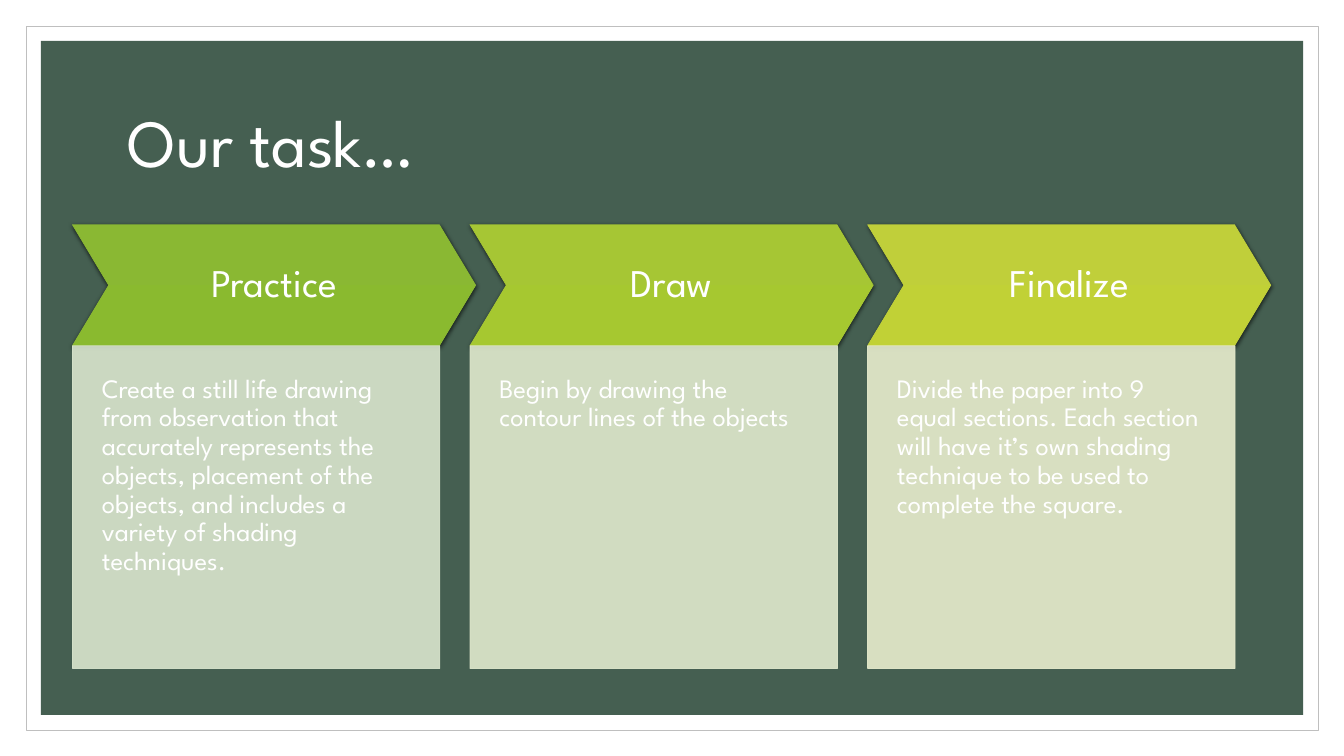
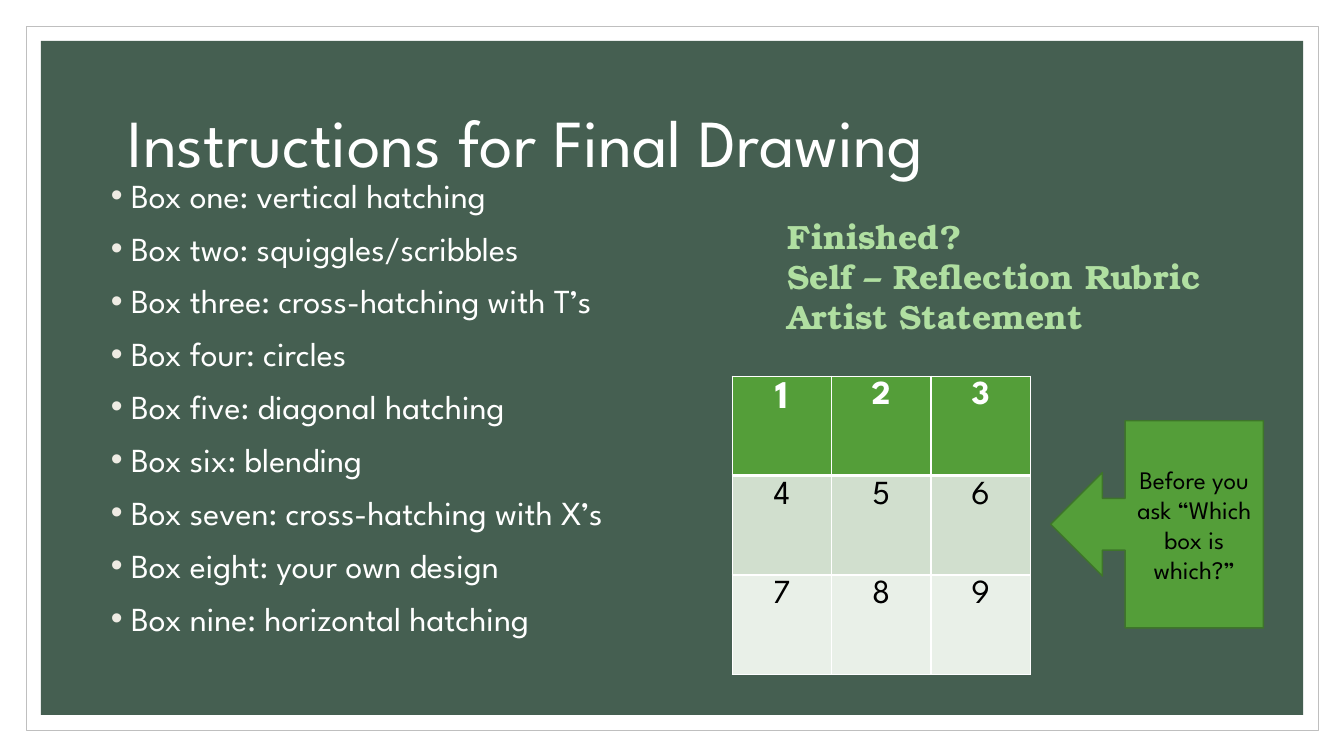
from dataclasses import dataclass

from lxml.etree import SubElement
from pptx import Presentation
from pptx.dml.color import RGBColor
from pptx.enum.shapes import MSO_SHAPE
from pptx.enum.text import MSO_ANCHOR, MSO_AUTO_SIZE, PP_ALIGN
from pptx.oxml.ns import qn
from pptx.util import Pt

RECT = MSO_SHAPE.RECTANGLE
CHEVRON = MSO_SHAPE.CHEVRON
CALLOUT = MSO_SHAPE.LEFT_ARROW_CALLOUT
TOP, MIDDLE = MSO_ANCHOR.TOP, MSO_ANCHOR.MIDDLE
LEFT, CENTER = PP_ALIGN.LEFT, PP_ALIGN.CENTER
NO_FIT = MSO_AUTO_SIZE.NONE
TITLE_ONLY, TITLE_BODY = 5, 1


@dataclass(frozen=True)
class Theme:
    """Colours, fonts and type sizes of the deck."""
    font: str = "League Spartan"
    serif: str = "TeX Gyre Bonum"
    white: str = "FFFFFF"
    black: str = "000000"
    edge: str = "BFBFBF"
    board: str = "455F51"
    bullet: str = "EEEBE3"
    mint: str = "B0DFA1"
    green: str = "549E39"
    moss: str = "3E752A"
    rows: tuple = ("549E39", "D1DFCE", "E9F0E8")
    steps: tuple = (("8AB833", "8ABA2F", "DAE6CE"),
                    ("A6C634", "A6C830", "E1EACE"),
                    ("C0CF3A", "C1D136", "E8EDCE"))
    title: int = 48
    head: int = 28
    body: int = 24
    label: int = 18
    small: int = 19


THEME = Theme()


def rgb(code):
    """Turn a hex code into a colour."""
    return RGBColor.from_string(code)


def put(frame, text, size=THEME.body, color=THEME.white, font=THEME.font,
        bold=False, align=LEFT, anchor=TOP, lead=1.0, before=0, inset=None):
    """Fill a text frame, one paragraph for each line of text."""
    frame.word_wrap = True
    frame.auto_size = NO_FIT
    frame.vertical_anchor = anchor
    if inset:
        (frame.margin_left, frame.margin_top,
         frame.margin_right, frame.margin_bottom) = map(Pt, inset)
    for i, line in enumerate(text.split("\n")):
        para = frame.add_paragraph() if i else frame.paragraphs[0]
        para.alignment = align
        para.line_spacing = lead
        para.space_before = Pt(before)
        run = para.add_run()
        run.text = line
        run.font.name, run.font.size, run.font.bold = font, Pt(size), bold
        run.font.color.rgb = rgb(color)


class Deck:
    """The deck's style and its current slide."""

    def __init__(self, theme):
        """Start an empty wide deck."""
        self.theme = theme
        self.show = Presentation()
        self.show.slide_width, self.show.slide_height = Pt(960), Pt(540)
        self.slide = None

    def start(self, layout, title):
        """Add a slide with its title."""
        first = self.slide is None
        self.slide = self.show.slides.add_slide(self.show.slide_layouts[layout])
        if first:
            self.frame()
        box = self.slide.shapes.title
        self.place(box, 84, 50.4, 792, 108)
        put(box.text_frame, title, size=self.theme.title, anchor=MIDDLE, lead=0.9)

    def place(self, shape, x, y, w, h):
        """Move and size a shape."""
        shape.left, shape.top, shape.width, shape.height = map(Pt, (x, y, w, h))

    def frame(self):
        """Put the white border and the board on the master."""
        look = self.theme
        tree = self.show.slide_master.shapes.element
        border = self.shape(RECT, 19, 19, 922.5, 502.5, look.white, look.edge)
        board = self.shape(RECT, 29.25, 29.25, 901.5, 481.5, look.board)
        for i, part in enumerate((border, board)):
            part.element.nvSpPr.cNvPr.set("id", str(20 + i))
            tree.insert(2 + i, part.element)

    def shape(self, kind, x, y, w, h, fill, line=None, width=0.5):
        """Draw a flat preset shape."""
        item = self.slide.shapes.add_shape(kind, Pt(x), Pt(y), Pt(w), Pt(h))
        item.shadow.inherit = False
        item.fill.solid()
        item.fill.fore_color.rgb = rgb(fill)
        if line:
            item.line.color.rgb = rgb(line)
            item.line.width = Pt(width)
        else:
            item.line.fill.background()
        return item

    def shade(self, item):
        """Give a shape a soft shadow below it."""
        glow = item.element.spPr.find(qn("a:effectLst"))
        outer = SubElement(glow, qn("a:outerShdw"), blurRad=str(Pt(3)),
                           dist=str(Pt(1)), dir="5400000", rotWithShape="0")
        tint = SubElement(outer, qn("a:srgbClr"), val=self.theme.black)
        SubElement(tint, qn("a:alpha"), val="63000")

    def step(self, x, name, text, tones):
        """Draw a chevron heading with its text panel."""
        look = self.theme
        start, end, pale = tones
        head = self.shape(CHEVRON, x, 160.5, 288, 86.5, start, start)
        head.adjustments[0] = 0.3
        head.fill.gradient()
        head.fill.gradient_angle = 270
        for stop, tone in zip(head.fill.gradient_stops, (start, end)):
            stop.color.rgb = rgb(tone)
        self.shade(head)
        put(head.text_frame, name, size=look.head, align=CENTER, anchor=MIDDLE,
            lead=0.9, inset=(10.8,) * 4)
        panel = self.shape(RECT, x, 247, 262.5, 230.5, pale, pale)
        for tint in panel.element.spPr.iter(qn("a:srgbClr")):
            SubElement(tint, qn("a:alpha"), val="90000")
        put(panel.text_frame, text, size=look.small, lead=0.9,
            inset=(21, 21, 21, 42))

    def list(self, text, *spot):
        """Fill the body with a bullet list."""
        body = self.slide.placeholders[1]
        self.place(body, *spot)
        put(body.text_frame, text, before=9)
        for para in body.text_frame.paragraphs:
            props = para._p.get_or_add_pPr()
            props.set("marL", str(Pt(14.4)))
            props.set("indent", str(-Pt(14.4)))
            tint = SubElement(props, qn("a:buClr"))
            SubElement(tint, qn("a:srgbClr"), val=self.theme.bullet)
            SubElement(props, qn("a:buFont"), typeface="Arial")
            SubElement(props, qn("a:buChar"), char="•")

    def note(self, text, *spot):
        """Add a bold serif text box."""
        box = self.slide.shapes.add_textbox(*map(Pt, spot))
        put(box.text_frame, text, color=self.theme.mint,
            font=self.theme.serif, bold=True)

    def edge(self, cell, side, width):
        """Draw one white border of a cell."""
        props = cell._tc.get_or_add_tcPr()
        line = SubElement(props, qn("a:ln" + side), w=str(Pt(width)))
        fill = SubElement(line, qn("a:solidFill"))
        SubElement(fill, qn("a:srgbClr"), val=self.theme.white)

    def grid(self, x, y, side):
        """Add a square table of numbered boxes."""
        look = self.theme
        count = len(look.rows)
        size = Pt(side * count)
        table = self.slide.shapes.add_table(
            count, count, Pt(x), Pt(y), size, size).table
        table.first_row = table.horz_banding = False
        for i in range(count):
            table.columns[i].width = table.rows[i].height = Pt(side)
        for i, cell in enumerate(table.iter_cells()):
            row = i // count
            top = row == 0
            for mark in "LRTB":
                thick = (row, mark) in ((0, "B"), (1, "T"))
                self.edge(cell, mark, 3 if thick else 1)
            cell.fill.solid()
            cell.fill.fore_color.rgb = rgb(look.rows[row])
            put_cell = {"color": look.white if top else look.black, "bold": top}
            put(cell.text_frame, str(i + 1), align=CENTER,
                size=look.body if i else look.head, **put_cell)

    def call(self, text, *spot):
        """Add a callout that points left."""
        look = self.theme
        item = self.shape(CALLOUT, *spot, look.green, look.moss, 1)
        put(item.text_frame, text, size=look.label, color=look.black,
            align=CENTER, anchor=MIDDLE)


STEPS = (
    ("Practice", "Create a still life drawing from observation that accurately "
     "represents the objects, placement of the objects, and includes a variety "
     "of shading techniques."),
    ("Draw", "Begin by drawing the contour lines of the objects"),
    ("Finalize", "Divide the paper into 9 equal sections. Each section will have "
     "it’s own shading technique to be used to complete the square."),
)
BOXES = """Box one: vertical hatching
Box two: squiggles/scribbles
Box three: cross-hatching with T’s
Box four: circles
Box five: diagonal hatching
Box six: blending
Box seven: cross-hatching with X’s
Box eight: your own design
Box nine: horizontal hatching"""


def main():
    """Build both slides and save the deck."""
    deck = Deck(THEME)
    deck.start(TITLE_ONLY, "Our task…")
    for i, (name, text) in enumerate(STEPS):
        deck.step(51.75 + 284 * i, name, text, THEME.steps[i])

    deck.start(TITLE_BODY, "Instructions for Final Drawing")
    deck.list(BOXES, 72, 121, 815, 383)
    deck.note("Finished?\nSelf – Reflection Rubric\nArtist Statement",
              555.5, 150.5, 320.5, 94.5)
    deck.grid(523, 268.75, 71)
    deck.call("Before you ask “Which box is which?”", 750.5, 300.5, 152, 148)
    deck.show.save("out.pptx")


if __name__ == "__main__":
    main()
